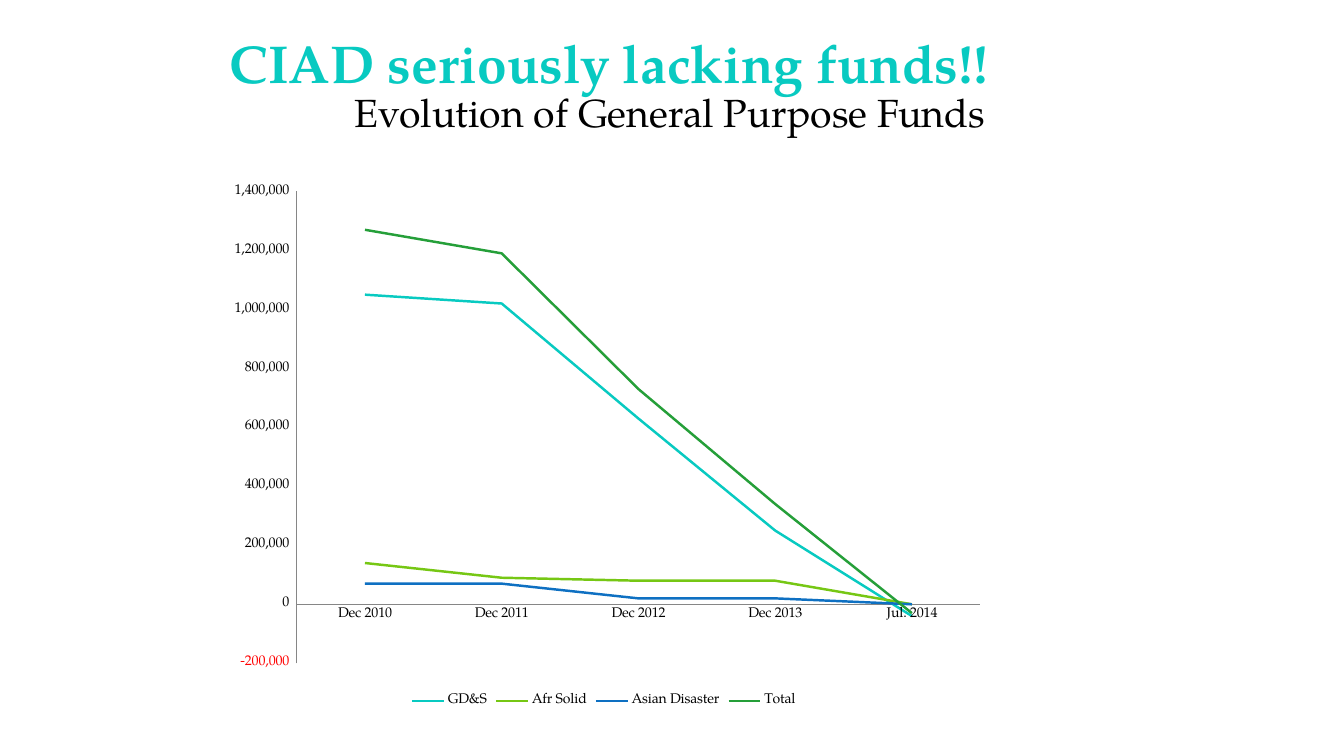
from dataclasses import dataclass

import lxml.etree
import pptx
import pptx.chart.axis
import pptx.chart.chart
import pptx.chart.data
import pptx.dml.color
import pptx.dml.line
import pptx.enum.chart
import pptx.enum.text
import pptx.oxml.ns
import pptx.slide
import pptx.util

FONT = "TeX Gyre Pagella"
BLACK = "000000"
TURQUOISE = "08CAC1"
AXIS_GREY = "868686"
COLUMNS, ROWS = 133.3, 75
CELL = pptx.util.Inches(0.1)
NUMBER_FORMAT = r"#,##0_ ;[Red]\-#,##0\ "
PERIODS = ["Dec 2010", "Dec 2011", "Dec 2012", "Dec 2013", "Jul. 2014"]


@dataclass(frozen=True)
class Region:
    column: float
    row: float
    columns: float
    rows: float

    def lengths(self) -> list[int]:
        return [round(cells * CELL) for cells in (self.column, self.row, self.columns, self.rows)]


@dataclass(frozen=True)
class Heading:
    text: str
    region: Region
    size: float
    color: str
    bold: bool
    line_spacing: float
    align: pptx.enum.text.PP_ALIGN
    anchor: pptx.enum.text.MSO_ANCHOR


@dataclass(frozen=True)
class Fund:
    name: str
    balances: tuple[int, ...]
    color: str


HEADINGS = [
    Heading("CIAD seriously lacking funds!!", Region(21.8, 0, 90, 9.9), 38, TURQUOISE, True, 0.9,
            pptx.enum.text.PP_ALIGN.LEFT, pptx.enum.text.MSO_ANCHOR.BOTTOM),
    Heading("Evolution of General Purpose Funds", Region(21.4, 9.2, 90.1, 6), 28, BLACK, False, 0.8,
            pptx.enum.text.PP_ALIGN.CENTER, pptx.enum.text.MSO_ANCHOR.TOP),
]
FUNDS = [
    Fund("GD&S", (1050000, 1020000, 630000, 250000, -40000), TURQUOISE),
    Fund("Afr Solid", (140000, 90000, 80000, 80000, 0), "76C714"),
    Fund("Asian Disaster", (70000, 70000, 20000, 20000, 0), "0E70C2"),
    Fund("Total", (1270000, 1190000, 730000, 340000, -30000), "259F39"),
]
CHART_REGION = Region(21.8, 17.4, 76.2, 53.2)
PLOT_SHARES = {"x": 0.1, "y": 0.03, "w": 0.89, "h": 0.88}


def rgb(value: str) -> pptx.dml.color.RGBColor:
    return pptx.dml.color.RGBColor.from_string(value)


def draw_heading(page: pptx.slide.Slide, heading: Heading) -> None:
    box = page.shapes.add_textbox(*heading.region.lengths())
    frame = box.text_frame
    frame.word_wrap = True
    frame.vertical_anchor = heading.anchor
    para = frame.paragraphs[0]
    para.alignment = heading.align
    para.line_spacing = heading.line_spacing
    span = para.add_run()
    span.text = heading.text
    span.font.name = FONT
    span.font.size = pptx.util.Pt(heading.size)
    span.font.bold = heading.bold
    span.font.color.rgb = rgb(heading.color)


def style_line(line: pptx.dml.line.LineFormat, color: str, width: float) -> None:
    line.color.rgb = rgb(color)
    line.width = pptx.util.Pt(width)


def style_axis(axis: pptx.chart.axis._BaseAxis) -> None:
    axis.has_major_gridlines = False
    axis.major_tick_mark = pptx.enum.chart.XL_TICK_MARK.NONE
    axis.minor_tick_mark = pptx.enum.chart.XL_TICK_MARK.NONE
    style_line(axis.format.line, AXIS_GREY, 0.75)


def place_plot(chart: pptx.chart.chart.Chart) -> None:
    qn = pptx.oxml.ns.qn
    plot_area = chart.element.find(".//" + qn("c:plotArea"))
    layout = plot_area.find(qn("c:layout"))
    if layout is None:
        layout = lxml.etree.Element(qn("c:layout"))
        plot_area.insert(0, layout)
    manual = lxml.etree.SubElement(layout, qn("c:manualLayout"))
    settings = {"layoutTarget": "inner", "xMode": "edge", "yMode": "edge", **PLOT_SHARES}
    for tag, value in settings.items():
        lxml.etree.SubElement(manual, qn("c:" + tag)).set("val", str(value))


def draw_chart(page: pptx.slide.Slide, funds: list[Fund]) -> None:
    data = pptx.chart.data.CategoryChartData(number_format=NUMBER_FORMAT)
    data.categories = PERIODS
    for fund in funds:
        data.add_series(fund.name, fund.balances)
    chart = page.shapes.add_chart(
        pptx.enum.chart.XL_CHART_TYPE.LINE, *CHART_REGION.lengths(), data).chart
    chart.has_title = False
    chart.font.name = FONT
    chart.font.size = pptx.util.Pt(10)
    chart.font.color.rgb = rgb(BLACK)
    chart.has_legend = True
    chart.legend.position = pptx.enum.chart.XL_LEGEND_POSITION.BOTTOM
    chart.legend.include_in_layout = False
    chart.plots[0].vary_by_categories = False
    for fund, series in zip(funds, chart.plots[0].series):
        series.smooth = False
        style_line(series.format.line, fund.color, 1.75)
    for axis in (chart.category_axis, chart.value_axis):
        style_axis(axis)
    chart.value_axis.minimum_scale = -200000
    chart.value_axis.maximum_scale = 1400000
    chart.value_axis.major_unit = 200000
    chart.value_axis.tick_labels.number_format = NUMBER_FORMAT
    chart.value_axis.tick_labels.number_format_is_linked = False
    place_plot(chart)


def main() -> None:
    deck = pptx.Presentation()
    deck.slide_width = round(COLUMNS * CELL)
    deck.slide_height = ROWS * CELL
    page = deck.slides.add_slide(deck.slide_layouts[6])
    for heading in HEADINGS:
        draw_heading(page, heading)
    draw_chart(page, FUNDS)
    deck.save("out.pptx")


if __name__ == "__main__":
    main()
